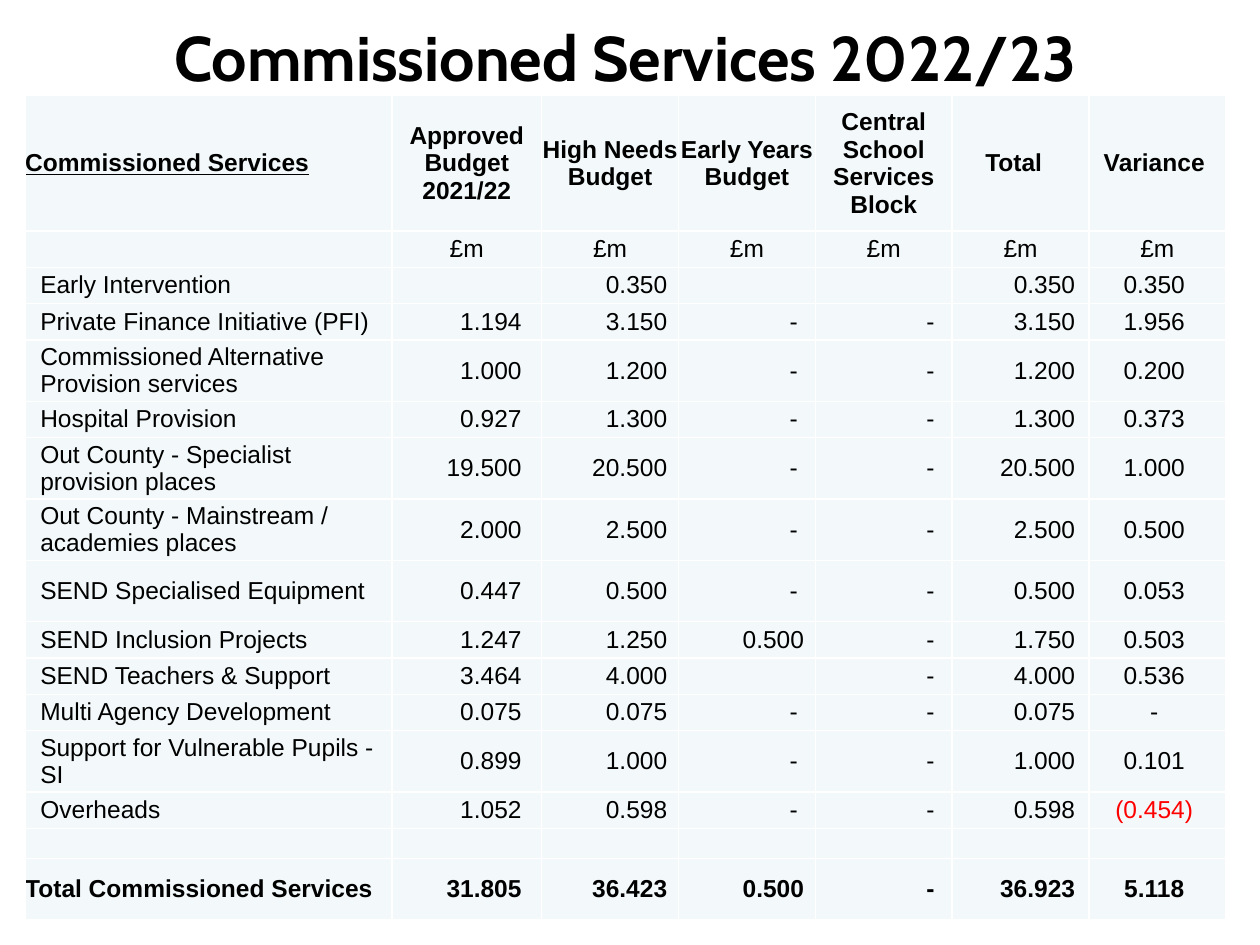
from pptx import Presentation
from pptx import util as u
from pptx.dml.color import RGBColor
from pptx.enum import text
from pptx.oxml import parse_xml
from pptx.oxml.ns import nsdecls

COLORS = {"ink": "000000", "negative": "FF0000", "cell": "F3F9FA", "border": "FFFFFF"}
LEFT, CENTER, RIGHT = text.PP_ALIGN.LEFT, text.PP_ALIGN.CENTER, text.PP_ALIGN.RIGHT
UNIT = u.Inches(0.1)  # the slide is a grid of 100 columns by 75 rows

COL_SHARES = [2.91, 1.19] + [1.086] * 5
HEAD, SHORT, TALL, GAP = 1.08, 0.29, 0.49, 0.24
INDENT = 0.12
RIGHT_INSETS = [0, 0.16, 0.09, 0.09, 0.09, 0.11, 0.05]
DASH_INSET = 0.14

HEADINGS = ["Commissioned Services", "Approved Budget 2021/22", "High Needs Budget",
            "Early Years Budget", "Central School Services Block", "Total", "Variance"]
SERVICES = [
    (SHORT, "Early Intervention", "", "0.350", "", "", "0.350", "0.350"),
    (SHORT, "Private Finance Initiative (PFI)", "1.194", "3.150", "-", "-", "3.150", "1.956"),
    (TALL, "Commissioned Alternative Provision services",
     "1.000", "1.200", "-", "-", "1.200", "0.200"),
    (SHORT, "Hospital Provision", "0.927", "1.300", "-", "-", "1.300", "0.373"),
    (TALL, "Out County - Specialist provision places",
     "19.500", "20.500", "-", "-", "20.500", "1.000"),
    (TALL, "Out County - Mainstream / academies places",
     "2.000", "2.500", "-", "-", "2.500", "0.500"),
    (TALL, "SEND Specialised Equipment", "0.447", "0.500", "-", "-", "0.500", "0.053"),
    (SHORT, "SEND Inclusion Projects", "1.247", "1.250", "0.500", "-", "1.750", "0.503"),
    (SHORT, "SEND Teachers & Support", "3.464", "4.000", "", "-", "4.000", "0.536"),
    (SHORT, "Multi Agency Development", "0.075", "0.075", "-", "-", "0.075", "-"),
    (TALL, "Support for Vulnerable Pupils - SI", "0.899", "1.000", "-", "-", "1.000", "0.101"),
    (SHORT, "Overheads", "1.052", "0.598", "-", "-", "0.598", "(0.454)"),
]
TOTALS = ["Total Commissioned Services", "31.805", "36.423", "0.500", "-", "36.923", "5.118"]


def grid_box(*cells):
    return [int(n * UNIT) for n in cells]


def set_font(p, name, size, bold=False, color="ink"):
    p.font.name, p.font.size, p.font.bold = name, u.Pt(size), bold
    p.font.color.rgb = RGBColor.from_string(COLORS[color])


def add_title(slide, box, words):
    tf = slide.shapes.add_textbox(*box).text_frame
    tf.word_wrap = True
    tf.vertical_anchor = text.MSO_ANCHOR.MIDDLE
    tf.margin_top = tf.margin_bottom = 0
    p = tf.paragraphs[0]
    p.text, p.alignment = words, CENTER
    set_font(p, "Cabin", 36, bold=True)


def add_borders(cell):
    tc_pr = cell._tc.get_or_add_tcPr()
    for i, side in enumerate(("lnL", "lnR", "lnT", "lnB")):
        tc_pr.insert(i, parse_xml(
            f'<a:{side} {nsdecls("a")} w="{u.Pt(1)}"><a:solidFill>'
            f'<a:srgbClr val="{COLORS["border"]}"/></a:solidFill></a:{side}>'))


def fill_cell(cell, words, align, bold=False, left=0, right=0):
    cell.margin_left, cell.margin_right = u.Inches(left), u.Inches(right)
    cell.margin_top = cell.margin_bottom = 0
    cell.vertical_anchor = text.MSO_ANCHOR.MIDDLE
    cell.fill.solid()
    cell.fill.fore_color.rgb = RGBColor.from_string(COLORS["cell"])
    add_borders(cell)
    p = cell.text_frame.paragraphs[0]
    p.alignment = align
    set_font(p, "Arial", 14, bold, "negative" if words.startswith("(") else "ink")
    if words:
        p.add_run().text = words
    else:  # an empty cell takes its line height from the end mark
        p._p.get_or_add_endParaRPr().set("sz", "1400")


def fill_figures(cells, label, figures, bold=False, indent=0):
    """Label on the left, budgets aligned right, variance centred."""
    fill_cell(cells[0], label, LEFT, bold, left=indent)
    for col, figure in enumerate(figures, 1):
        last = col == len(figures)
        inset = DASH_INSET if figure == "-" and not last else RIGHT_INSETS[col]
        fill_cell(cells[col], figure, CENTER if last else RIGHT, bold, right=inset)


def add_budget_table(slide, box):
    heights = [HEAD, SHORT] + [service[0] for service in SERVICES] + [GAP, TALL]
    table = slide.shapes.add_table(len(heights), len(COL_SHARES), *box).table
    table.first_row = table.horz_banding = False
    for column, share in zip(table.columns, COL_SHARES):
        column.width = int(box[2] * share / sum(COL_SHARES))
    for row, share in zip(table.rows, heights):
        row.height = int(box[3] * share / sum(heights))

    rows = [list(row.cells) for row in table.rows]
    for col, heading in enumerate(HEADINGS):
        inset = RIGHT_INSETS[col] if col > 4 else 0
        fill_cell(rows[0][col], heading, CENTER if col else LEFT, bold=True, right=inset)
        fill_cell(rows[1][col], "£m" if col else "", CENTER)
        fill_cell(rows[-2][col], "", LEFT)
    rows[0][0].text_frame.paragraphs[0].font.underline = True
    for cells, (_, label, *figures) in zip(rows[2:], SERVICES):
        fill_figures(cells, label, figures, indent=INDENT)
    fill_figures(rows[-1], TOTALS[0], TOTALS[1:], bold=True)


def main():
    prs = Presentation()
    prs.slide_width, prs.slide_height = grid_box(100, 75)
    slide = prs.slides.add_slide(prs.slide_layouts[6])
    add_title(slide, grid_box(2.7, 1.3, 93.9, 6.3), "Commissioned Services 2022/23")
    add_budget_table(slide, grid_box(2, 7.6, 95.3, 65.4))
    prs.save("out.pptx")


if __name__ == "__main__":
    main()
